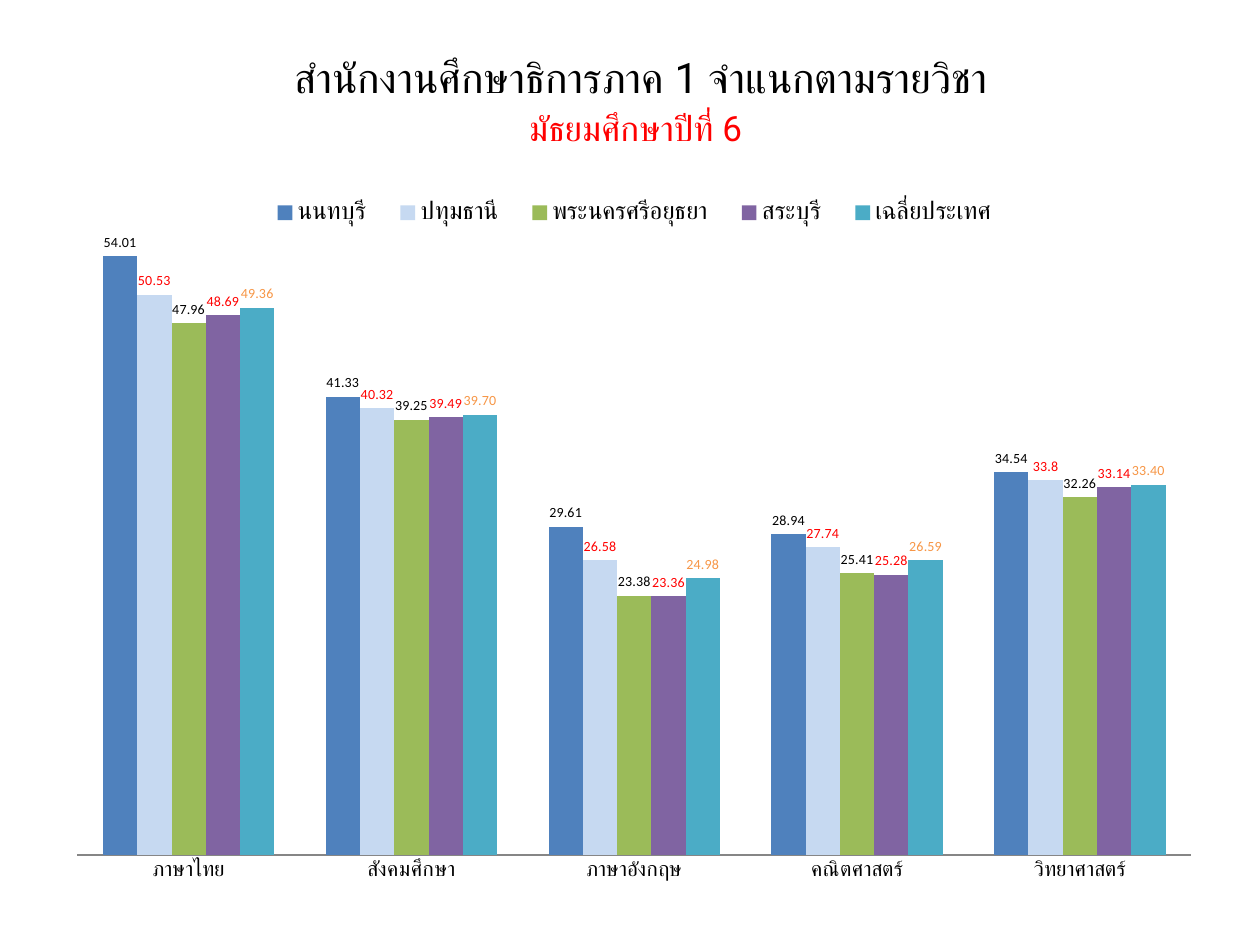
from lxml import etree
from pptx import Presentation
from pptx import util as u
from pptx.chart.data import CategoryChartData
from pptx.dml.color import RGBColor
from pptx.enum import chart as ch, text
from pptx.oxml import parse_xml
from pptx.oxml.ns import nsdecls, qn

BLACK, RED, ORANGE = "000000", "FF0000", "F79646"
THAI_FONT, NUMBER_FONT = "Roboto", "Calibri"

# text, (left, top, width, height), size, colour
HEADINGS = [
    ("สำนักงานศึกษาธิการภาค 1 จำแนกตามรายวิชา", (0.28, 0.36, 9.61, 0.5), 24, BLACK),
    ("มัธยมศึกษาปีที่ 6", (0.24, 0.8, 9.61, 0.44), 20, RED),
]
CHART_AREA = (0.43, 1.02, 9.21, 6.07)
SUBJECTS = ["ภาษาไทย", "สังคมศึกษา", "ภาษาอังกฤษ", "คณิตศาสตร์", "วิทยาศาสตร์"]
# name, scores, fill, label colour, label format
PROVINCES = [
    ("นนทบุรี", (54.01, 41.33, 29.61, 28.94, 34.54), "4F81BD", BLACK, "General"),
    ("ปทุมธานี", (50.53, 40.32, 26.58, 27.74, 33.8), "C6D9F1", RED, "General"),
    ("พระนครศรีอยุธยา", (47.96, 39.25, 23.38, 25.41, 32.26), "9BBB59", BLACK, "General"),
    ("สระบุรี", (48.69, 39.49, 23.36, 25.28, 33.14), "8064A2", RED, "General"),
    ("เฉลี่ยประเทศ", (49.36, 39.7, 24.98, 26.59, 33.4), "4BACC6", ORANGE, "0.00"),
]
# Shares of the chart area: x, y, w, h
PLOT_SHARE = (0.02, 0.08, 0.96, 0.87)
LEGEND_SHARE = (0.17, 0.08, 0.66, 0.06)


def colour(hex_string):
    return RGBColor.from_string(hex_string)


def set_font(font, name, size, hex_string=BLACK):
    font.name, font.size = name, u.Pt(size)
    font.bold = False
    font.color.rgb = colour(hex_string)


def place(parent, shares, index, inner=False):
    """Give a chart part a manual layout as shares of the chart area."""
    for old in parent.findall(qn("c:layout")):
        parent.remove(old)
    layout = parse_xml(f"<c:layout {nsdecls('c')}><c:manualLayout/></c:layout>")
    settings = [("layoutTarget", "inner")] if inner else []
    settings += [("xMode", "edge"), ("yMode", "edge"), *zip("xywh", shares)]
    for tag, value in settings:
        etree.SubElement(layout[0], qn(f"c:{tag}")).set("val", str(value))
    parent.insert(index, layout)


def add_heading(page, words, area, size, hex_string):
    box = page.shapes.add_textbox(*map(u.Inches, area))
    frame = box.text_frame
    frame.word_wrap = True
    frame.auto_size = text.MSO_AUTO_SIZE.SHAPE_TO_FIT_TEXT
    para = frame.paragraphs[0]
    para.text = words
    para.alignment = text.PP_ALIGN.CENTER
    set_font(para.font, THAI_FONT, size, hex_string)


def add_score_chart(page):
    data = CategoryChartData()
    data.categories = SUBJECTS
    for name, scores, *_ in PROVINCES:
        data.add_series(name, scores)
    chart = page.shapes.add_chart(ch.XL_CHART_TYPE.COLUMN_CLUSTERED,
                                  *map(u.Inches, CHART_AREA), data).chart
    chart.has_title = False
    set_font(chart.font, NUMBER_FONT, 10)

    subjects = chart.category_axis
    subjects.major_tick_mark = ch.XL_TICK_MARK.NONE
    subjects.format.line.color.rgb = colour("868686")
    set_font(subjects.tick_labels.font, THAI_FONT, 12)
    scale = chart.value_axis
    scale.minimum_scale, scale.maximum_scale = 0, 60
    scale.has_major_gridlines = False
    scale.visible = False

    chart.has_legend = True
    legend = chart.legend
    legend.position = ch.XL_LEGEND_POSITION.TOP
    legend.include_in_layout = False
    set_font(legend.font, THAI_FONT, 14)

    plot = chart.plots[0]
    plot.gap_width, plot.overlap = 150, 0
    plot.vary_by_categories = False
    for series, (_, _, fill, label_colour, number_format) in zip(plot.series, PROVINCES):
        series.format.fill.solid()
        series.format.fill.fore_color.rgb = colour(fill)
        labels = series.data_labels
        labels.show_value = True
        labels.position = ch.XL_LABEL_POSITION.OUTSIDE_END
        labels.number_format = number_format
        labels.number_format_is_linked = False
        set_font(labels.font, NUMBER_FONT, 8, label_colour)

    place(chart.element.find(".//" + qn("c:plotArea")), PLOT_SHARE, 0, inner=True)
    place(chart.element.find(".//" + qn("c:legend")), LEGEND_SHARE, 1)


def main():
    deck = Presentation()
    deck.slide_width, deck.slide_height = u.Inches(10), u.Inches(7.5)
    page = deck.slides.add_slide(deck.slide_layouts[6])
    for heading in HEADINGS:
        add_heading(page, *heading)
    add_score_chart(page)
    deck.save("out.pptx")


if __name__ == "__main__":
    main()
